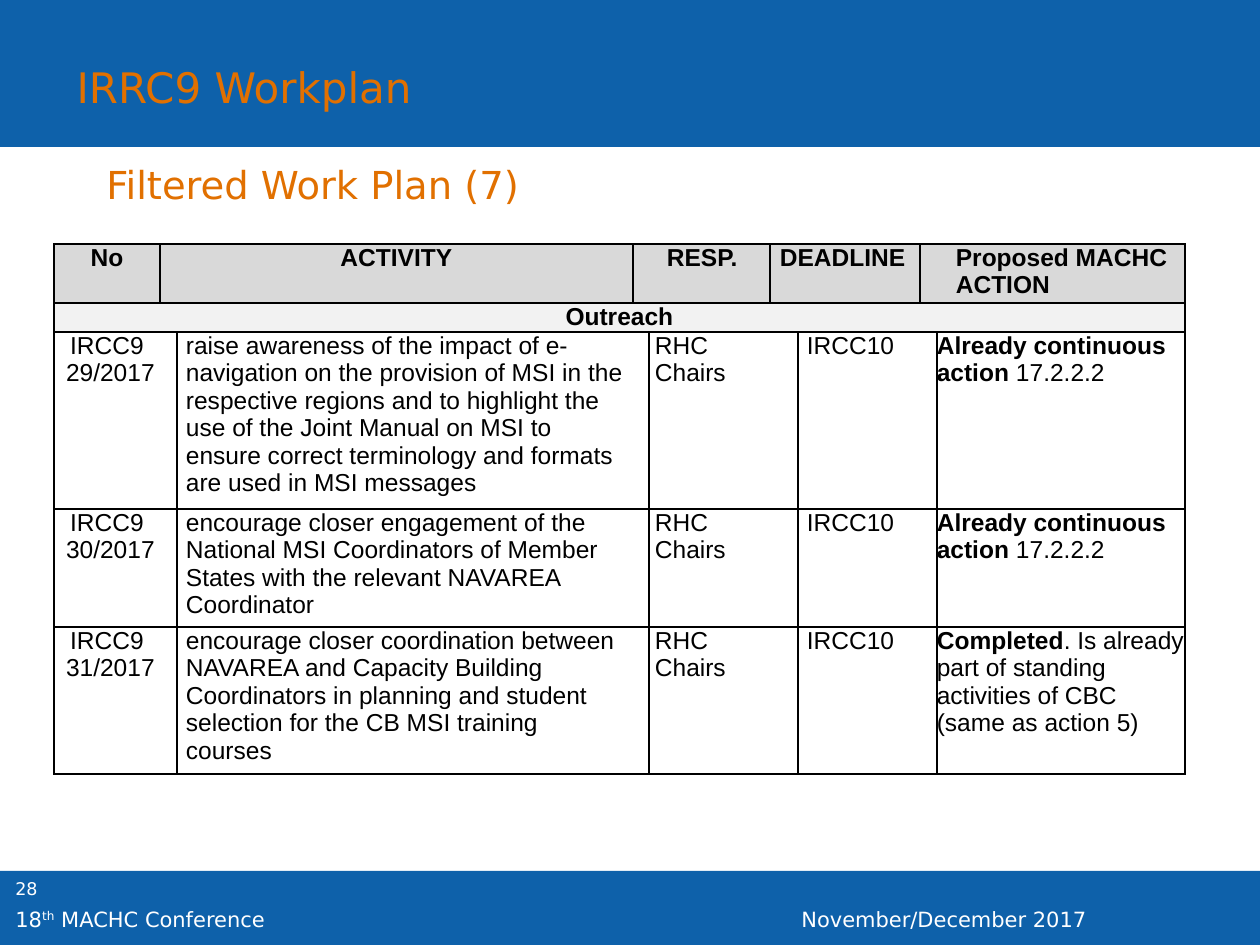
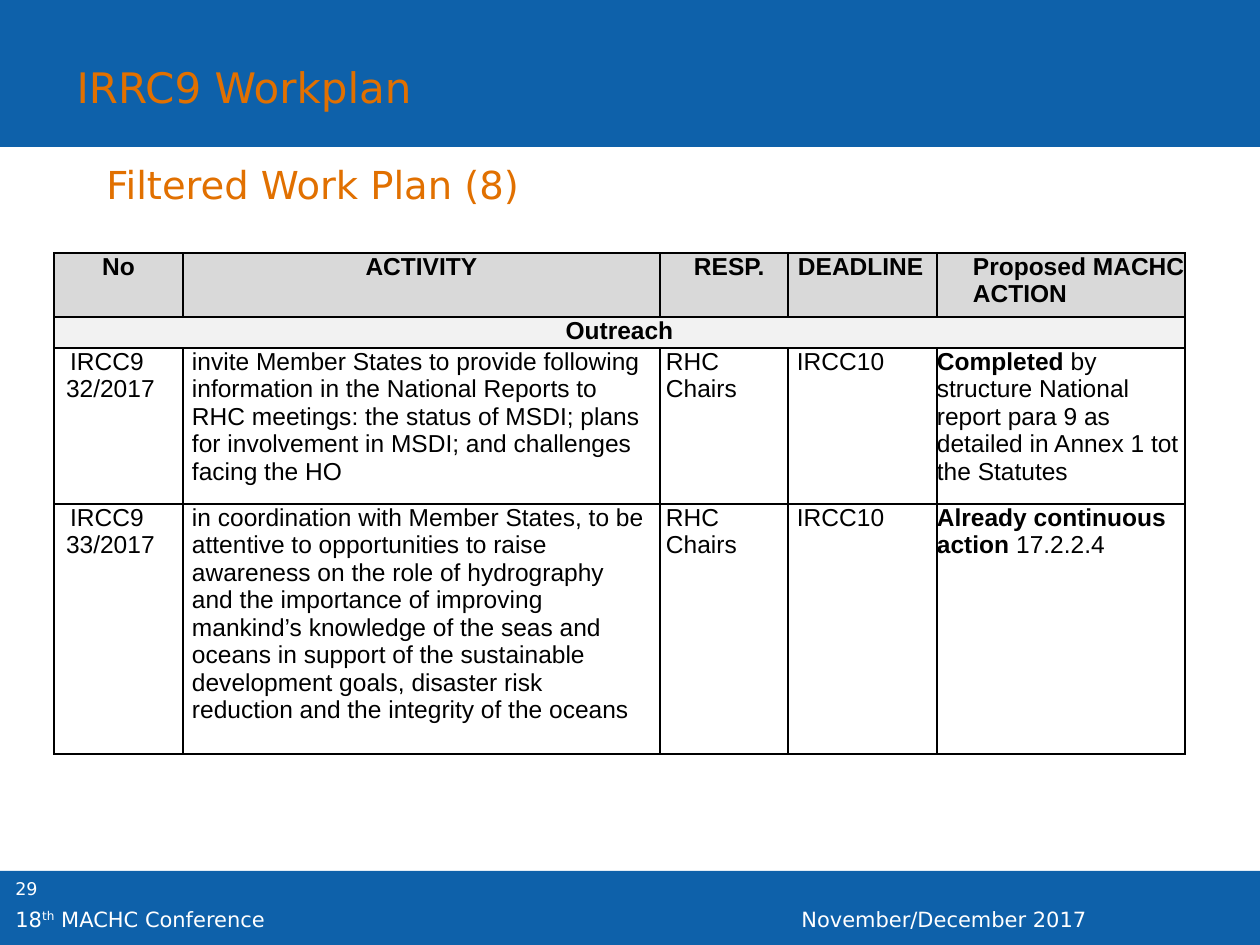
from lxml import etree
from pptx import Presentation
from pptx.dml.color import RGBColor
from pptx.enum.shapes import MSO_SHAPE
from pptx.enum.text import MSO_ANCHOR, MSO_AUTO_SIZE, PP_ALIGN
from pptx.oxml.ns import qn
from pptx.util import Pt

RECT = MSO_SHAPE.RECTANGLE
TOP = MSO_ANCHOR.TOP
NO_FIT = MSO_AUTO_SIZE.NONE
LEFT, CENTER = PP_ALIGN.LEFT, PP_ALIGN.CENTER

WIDTH, HEIGHT = 1260, 945
TABLE_LEFT = 54
BORDER = Pt(1)
COLORS = {
    "band": "0E61AA",
    "heading": "E17000",
    "footer": "FFFFFF",
    "ink": "000000",
    "header": "D9D9D9",
    "section": "F2F2F2",
}
TITLE = {"name": "DejaVu Sans", "size": Pt(24), "bold": False}
SUBTITLE = {**TITLE, "size": Pt(22)}
FOOTER = {**TITLE, "size": Pt(12)}
NUMBER = {**TITLE, "size": Pt(10)}
CELL = {"name": "Arial", "size": Pt(14), "bold": False}
CELL_BOLD = {**CELL, "bold": True}

HEADERS = ["No", "ACTIVITY", "RESP.", "DEADLINE", "Proposed MACHC ACTION"]
HEADER_LAYOUT = [
    {"align": CENTER},
    {"align": CENTER},
    {"left": 34},
    {"left": 10},
    {"left": 36},
]

PLANS = [
    {
        "number": "28",
        "subtitle": "Filtered Work Plan (7)",
        "top": 244,
        "cols": [106, 17, 456, 16, 121, 28, 122, 17, 248],
        "rows": [59, 29, 177, 118, 147],
        "header_starts": [0, 1, 3, 5, 7],
        "body_starts": [0, 2, 4, 6, 8],
        "activity_right": 25,
        "items": [
            ("IRCC9 29/2017",
             "raise awareness of the impact of e- navigation on the provision of MSI "
             "in the respective regions and to highlight the use of the Joint Manual "
             "on MSI to ensure correct terminology and formats are used in MSI messages",
             [[("Already continuous action", True), (" 17.2.2.2", False)]]),
            ("IRCC9 30/2017",
             "encourage closer engagement of the National MSI Coordinators of Member "
             "States with the relevant NAVAREA Coordinator",
             [[("Already continuous action", True), (" 17.2.2.2", False)]]),
            ("IRCC9 31/2017",
             "encourage closer coordination between NAVAREA and Capacity Building "
             "Coordinators in planning and student selection for the CB MSI training "
             "courses",
             [[("Completed", True),
               (". Is already part of standing activities of CBC", False)],
              [("(same as action 5)", False)]]),
        ],
    },
    {
        "number": "29",
        "subtitle": "Filtered Work Plan (8)",
        "top": 253,
        "cols": [129, 477, 128, 149, 248],
        "rows": [64, 31, 156, 250],
        "header_starts": [0, 1, 2, 3, 4],
        "body_starts": [0, 1, 2, 3, 4],
        "activity_right": 12,
        "items": [
            ("IRCC9 32/2017",
             "invite Member States to provide following information in the National "
             "Reports to RHC meetings: the status of MSDI; plans for involvement in "
             "MSDI; and challenges facing the HO",
             [[("Completed", True),
               (" by structure National report para 9 as detailed in Annex 1 tot "
                "the Statutes", False)]]),
            ("IRCC9 33/2017",
             "in coordination with Member States, to be attentive to opportunities to "
             "raise awareness on the role of hydrography and the importance of "
             "improving mankind’s knowledge of the seas and oceans in support of the "
             "sustainable development goals, disaster risk reduction and the integrity "
             "of the oceans",
             [[("Already continuous action", True), (" 17.2.2.4", False)]]),
        ],
    },
]


def px(n):
    return round(n * 914400 / 126)


def rgb(key):
    return RGBColor.from_string(COLORS[key])


def add_run(p, text, style, color):
    r = p.add_run()
    r.text = text
    for name, value in style.items():
        setattr(r.font, name, value)
    r.font.color.rgb = rgb(color)
    return r


def set_frame(tf, wrap=True):
    for name, value in {"word_wrap": wrap, "auto_size": NO_FIT,
                        "vertical_anchor": TOP}.items():
        setattr(tf, name, value)


def add_text(slide, box, runs, style, color, wrap=True):
    sp = slide.shapes.add_textbox(*map(px, box))
    set_frame(sp.text_frame, wrap)
    for text in runs:
        add_run(sp.text_frame.paragraphs[0], text, style, color)
    return sp


def add_band(slide, top, height):
    sp = slide.shapes.add_shape(RECT, 0, px(top), px(WIDTH), px(height))
    sp.shadow.inherit = False
    sp.fill.solid()
    sp.fill.fore_color.rgb = rgb("band")
    sp.line.fill.background()
    return sp


def share_on_layout(slide):
    conference = add_text(slide, (3, 900, 552, 30),
                          ["18", "th", " MACHC Conference"], FOOTER, "footer")
    ordinal = conference.text_frame.paragraphs[0].runs[1]
    ordinal.font._element.set("baseline", "30000")
    date = add_text(slide, (789, 900, 471, 30), ["November/December 2017"],
                    FOOTER, "footer")
    shared = [add_band(slide, 871, HEIGHT - 871), add_band(slide, 0, 147),
              date, conference]
    for sp in shared:
        slide.slide_layout.shapes.element.append(sp.element)


def add_title(slide, text):
    sp = slide.shapes.title
    for name, value in {"left": 64, "top": 55, "width": 374, "height": 63}.items():
        setattr(sp, name, px(value))
    set_frame(sp.text_frame)
    p = sp.text_frame.paragraphs[0]
    p.alignment = LEFT
    add_run(p, text, TITLE, "heading")


def style_cell(cell, fill):
    for side in ("left", "right", "top", "bottom"):
        setattr(cell, f"margin_{side}", 0)
    tcPr = cell._tc.get_or_add_tcPr()
    for tag in ("a:lnL", "a:lnR", "a:lnT", "a:lnB"):
        ln = etree.SubElement(tcPr, qn(tag), w=str(BORDER))
        solid = etree.SubElement(ln, qn("a:solidFill"))
        etree.SubElement(solid, qn("a:srgbClr"), val=COLORS["ink"])
    if fill:
        cell.fill.solid()
        cell.fill.fore_color.rgb = rgb(fill)
    else:
        cell.fill.background()


def write_cell(cell, paragraphs, align=LEFT, left=0, indent=0, right=0):
    tf = cell.text_frame
    for i, runs in enumerate(paragraphs):
        p = tf.add_paragraph() if i else tf.paragraphs[0]
        p.alignment = align
        pPr = p._p.get_or_add_pPr()
        for name, value in {"marL": left, "marR": right, "indent": indent}.items():
            pPr.set(name, str(px(value)))
        for text, bold in runs:
            add_run(p, text, CELL_BOLD if bold else CELL, "ink")


def fill_row(table, row, starts, contents, layouts, fill=None):
    count = len(table.columns)
    for col in range(count):
        style_cell(table.cell(row, col), fill)
    ends = [*starts[1:], count]
    for start, end, paragraphs, layout in zip(starts, ends, contents, layouts):
        cell = table.cell(row, start)
        if end - start > 1:
            cell.merge(table.cell(row, end - 1))
        write_cell(cell, paragraphs, **layout)


def add_plan_table(slide, plan):
    cols, rows = plan["cols"], plan["rows"]
    box = (TABLE_LEFT, plan["top"], sum(cols), sum(rows))
    table = slide.shapes.add_table(len(rows), len(cols), *map(px, box)).table
    table.first_row = table.horz_banding = False
    for column, width in zip(table.columns, cols):
        column.width = px(width)
    for row, height in zip(table.rows, rows):
        row.height = px(height)

    fill_row(table, 0, plan["header_starts"], [[[(h, True)]] for h in HEADERS],
             HEADER_LAYOUT, "header")
    fill_row(table, 1, [0], [[[("Outreach", True)]]], [{"align": CENTER}], "section")
    body_layout = [
        {"left": 12, "indent": 4},
        {"left": 9, "right": plan["activity_right"]},
        {"left": 6, "right": 30},
        {"left": 9},
        {},
    ]
    for row, (number, activity, action) in enumerate(plan["items"], 2):
        plain = [[[(text, False)]]
                 for text in (number, activity, "RHC Chairs", "IRCC10")]
        fill_row(table, row, plan["body_starts"], [*plain, action], body_layout)


def add_plan_slide(prs, plan):
    slide = prs.slides.add_slide(prs.slide_layouts[5])
    add_title(slide, "IRRC9 Workplan")
    add_text(slide, (94, 155, 455, 59), [plan["subtitle"]], SUBTITLE, "heading",
             wrap=False)
    add_text(slide, (3, 872, 98, 50), [plan["number"]], NUMBER, "footer")
    add_plan_table(slide, plan)
    return slide


def main():
    prs = Presentation()
    prs.slide_width, prs.slide_height = px(WIDTH), px(HEIGHT)
    slides = [add_plan_slide(prs, plan) for plan in PLANS]
    share_on_layout(slides[0])
    prs.save("out.pptx")


if __name__ == "__main__":
    main()
